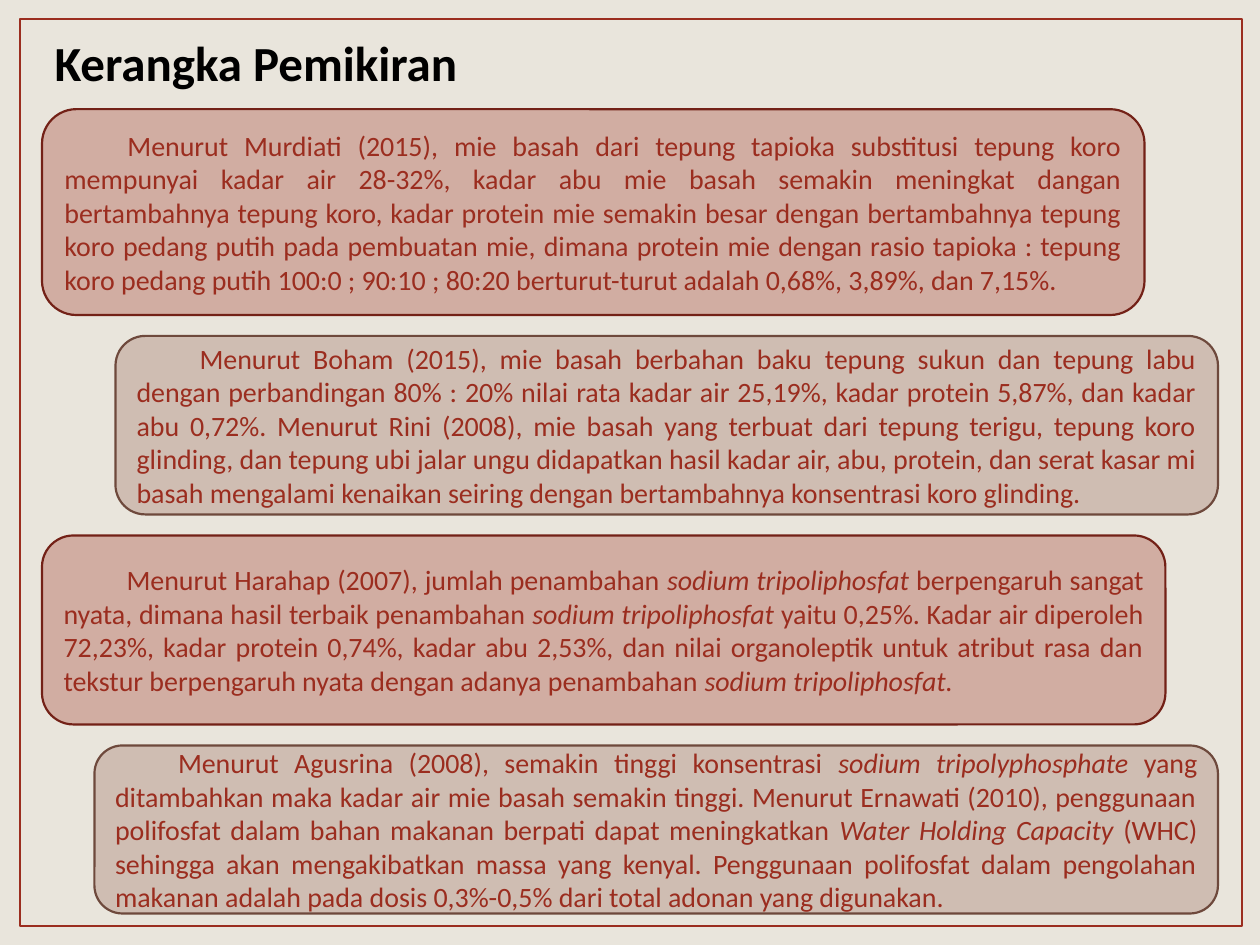
from dataclasses import dataclass

from lxml import etree
from pptx import Presentation
from pptx.dml.color import RGBColor
from pptx.enum.shapes import MSO_SHAPE
from pptx.enum.text import MSO_ANCHOR, MSO_AUTO_SIZE, PP_ALIGN
from pptx.oxml.ns import qn
from pptx.util import Inches, Pt

RECTANGLE, ROUNDED = MSO_SHAPE.RECTANGLE, MSO_SHAPE.ROUNDED_RECTANGLE
TOP, MIDDLE = MSO_ANCHOR.TOP, MSO_ANCHOR.MIDDLE
LEFT, JUSTIFY = PP_ALIGN.LEFT, PP_ALIGN.JUSTIFY
FIT_SHAPE = MSO_AUTO_SIZE.SHAPE_TO_FIT_TEXT

CELL = Inches(1 / 12)  # the slide is a grid of 120 columns by 90 rows
COLUMNS, ROWS = 120, 90
MARGIN, GAP, FIRST_ROW = 4, 2, 10.4


@dataclass(frozen=True)
class Theme:
    font: str = "Calibri"
    title_size: int = 28
    body_size: int = 16
    background: str = "E9E5DC"
    title: str = "000000"
    accent: str = "9B2D1F"
    left_card: tuple = ("9B2D1F", "732117")  # fill, line
    right_card: tuple = ("956251", "6E493C")
    card_opacity: int = 30
    frame_width: float = 1.5
    card_width: float = 1.25


THEME = Theme()

# Each card: columns wide, rows high, then text that alternates roman and italic.
CARDS = [
    (105, 19.6, [
        "Menurut Murdiati (2015), mie basah dari tepung tapioka substitusi tepung koro "
        "mempunyai kadar air 28-32%, kadar abu mie basah semakin meningkat dangan "
        "bertambahnya tepung koro, kadar protein mie semakin besar dengan bertambahnya "
        "tepung koro pedang putih pada pembuatan mie, dimana protein mie dengan rasio "
        "tapioka : tepung koro pedang putih 100:0 ; 90:10 ; 80:20 berturut-turut adalah "
        "0,68%, 3,89%, dan 7,15%."]),
    (105, 17, [
        "Menurut Boham (2015), mie basah berbahan baku tepung sukun dan tepung labu "
        "dengan perbandingan 80% : 20% nilai rata kadar air 25,19%, kadar protein 5,87%, "
        "dan kadar abu 0,72%. Menurut Rini (2008), mie basah yang terbuat dari tepung "
        "terigu, tepung koro glinding, dan tepung ubi jalar ungu didapatkan hasil kadar "
        "air, abu, protein, dan serat kasar mi basah mengalami kenaikan seiring dengan "
        "bertambahnya konsentrasi koro glinding."]),
    (107, 18, [
        "Menurut Harahap (2007), jumlah penambahan ",
        "sodium tripoliphosfat ",
        "berpengaruh sangat nyata, dimana hasil terbaik penambahan ",
        "sodium tripoliphosfat ",
        "yaitu 0,25%. Kadar air diperoleh 72,23%, kadar protein 0,74%, kadar abu 2,53%, "
        "dan nilai organoleptik untuk atribut rasa dan tekstur berpengaruh nyata dengan "
        "adanya penambahan ",
        "sodium tripoliphosfat."]),
    (107, 16, [
        "Menurut Agusrina (2008), semakin tinggi konsentrasi ",
        "sodium tripolyphosphate",
        " yang ditambahkan maka kadar air mie basah semakin tinggi. Menurut Ernawati "
        "(2010), penggunaan polifosfat dalam bahan makanan berpati dapat meningkatkan ",
        "Water Holding Capacity ",
        "(WHC) sehingga akan mengakibatkan massa yang kenyal. Penggunaan polifosfat "
        "dalam pengolahan makanan adalah pada dosis 0,3%-0,5% dari total adonan yang "
        "digunakan."]),
]


def rgb(color):
    return RGBColor.from_string(color)


def grid(*cells):
    """Turn grid columns and rows into slide lengths."""
    return [round(cell * CELL) for cell in cells]


def add_run(paragraph, text, size, color, bold=False, italic=False):
    run = paragraph.add_run()
    run.text = text
    font = run.font
    font.name, font.size = THEME.font, Pt(size)
    font.bold, font.italic = bold, italic
    font.color.rgb = rgb(color)


def add_outlined(slide, preset, box, color, width):
    shape = slide.shapes.add_shape(preset, *grid(*box))
    shape.shadow.inherit = False
    shape.line.color.rgb = rgb(color)
    shape.line.width = Pt(width)
    return shape


def add_frame(slide, box):
    frame = add_outlined(slide, RECTANGLE, box, THEME.accent, THEME.frame_width)
    frame.fill.background()


def place_title(slide, box, text):
    title = slide.shapes.title
    title.left, title.top, title.width, title.height = grid(*box)
    body = title.text_frame
    body.word_wrap, body.auto_size = False, FIT_SHAPE
    body.vertical_anchor = TOP
    paragraph = body.paragraphs[0]
    paragraph.alignment = LEFT
    add_run(paragraph, text, THEME.title_size, THEME.title, bold=True)


def add_card(slide, box, colors, passages):
    fill, line = colors
    card = add_outlined(slide, ROUNDED, box, line, THEME.card_width)
    card.fill.solid()
    card.fill.fore_color.rgb = rgb(fill)
    tint = card.fill._xPr.find(qn("a:solidFill"))[0]
    etree.SubElement(tint, qn("a:alpha"), val=str(THEME.card_opacity * 1000))

    body = card.text_frame
    body.word_wrap, body.vertical_anchor = True, MIDDLE
    paragraph = body.paragraphs[0]
    paragraph.alignment = JUSTIFY
    properties = paragraph._p.get_or_add_pPr()
    properties.set("marL", "0")
    properties.set("indent", str(Inches(0.5)))
    for index, passage in enumerate(passages):
        add_run(paragraph, passage, THEME.body_size, THEME.accent, italic=index % 2 == 1)


def add_cards(slide, top, cards):
    """Stack the cards, alternating between the left and right margins."""
    for index, (width, height, passages) in enumerate(cards):
        if index % 2 == 0:
            left, colors = MARGIN, THEME.left_card
        else:
            left, colors = COLUMNS - MARGIN - width, THEME.right_card
        add_card(slide, (left, top, width, height), colors, passages)
        top += height + GAP


def main():
    deck = Presentation()
    deck.slide_width, deck.slide_height = grid(COLUMNS, ROWS)
    slide = deck.slides.add_slide(deck.slide_layouts.get_by_name("Title Only"))
    slide.background.fill.solid()
    slide.background.fill.fore_color.rgb = rgb(THEME.background)
    add_frame(slide, (1.9, 1.8, 116.4, 86.4))
    place_title(slide, (MARGIN, 2.5, 42, 6.8), "Kerangka Pemikiran")
    add_cards(slide, FIRST_ROW, CARDS)
    deck.save("out.pptx")


if __name__ == "__main__":
    main()
